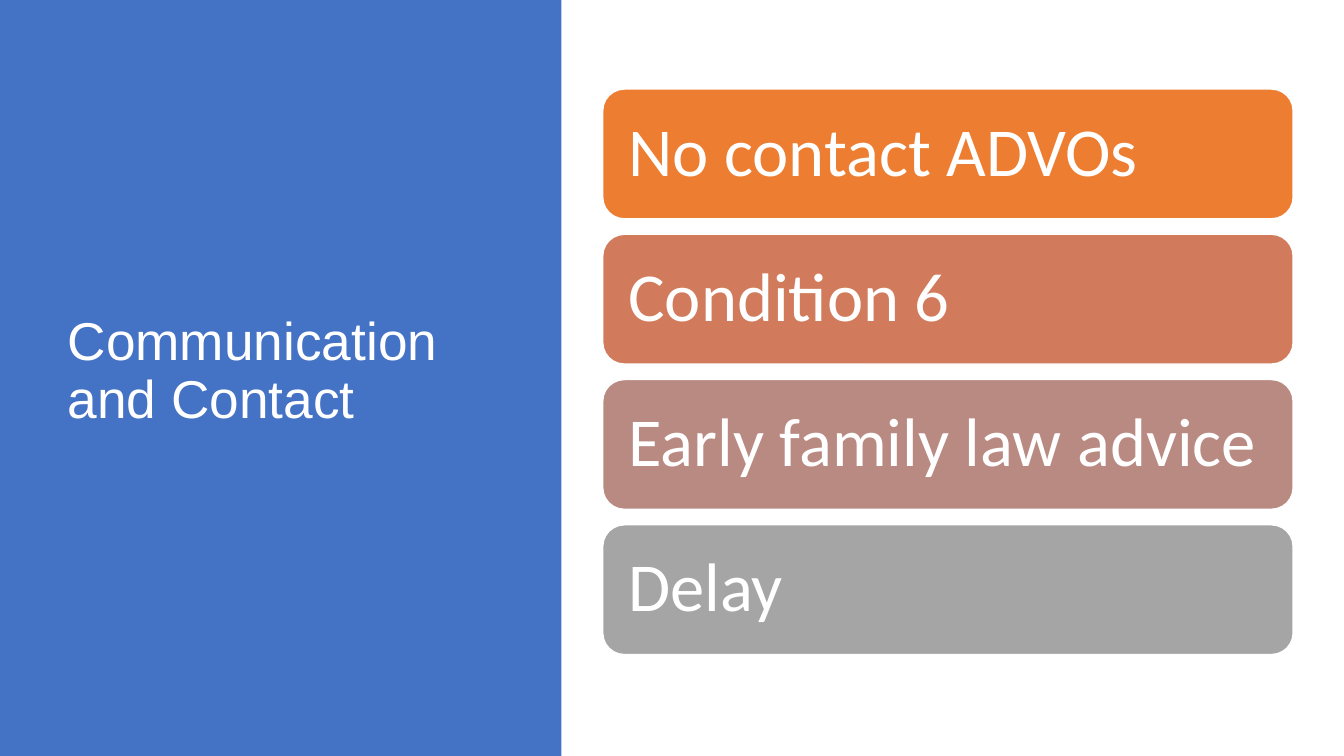
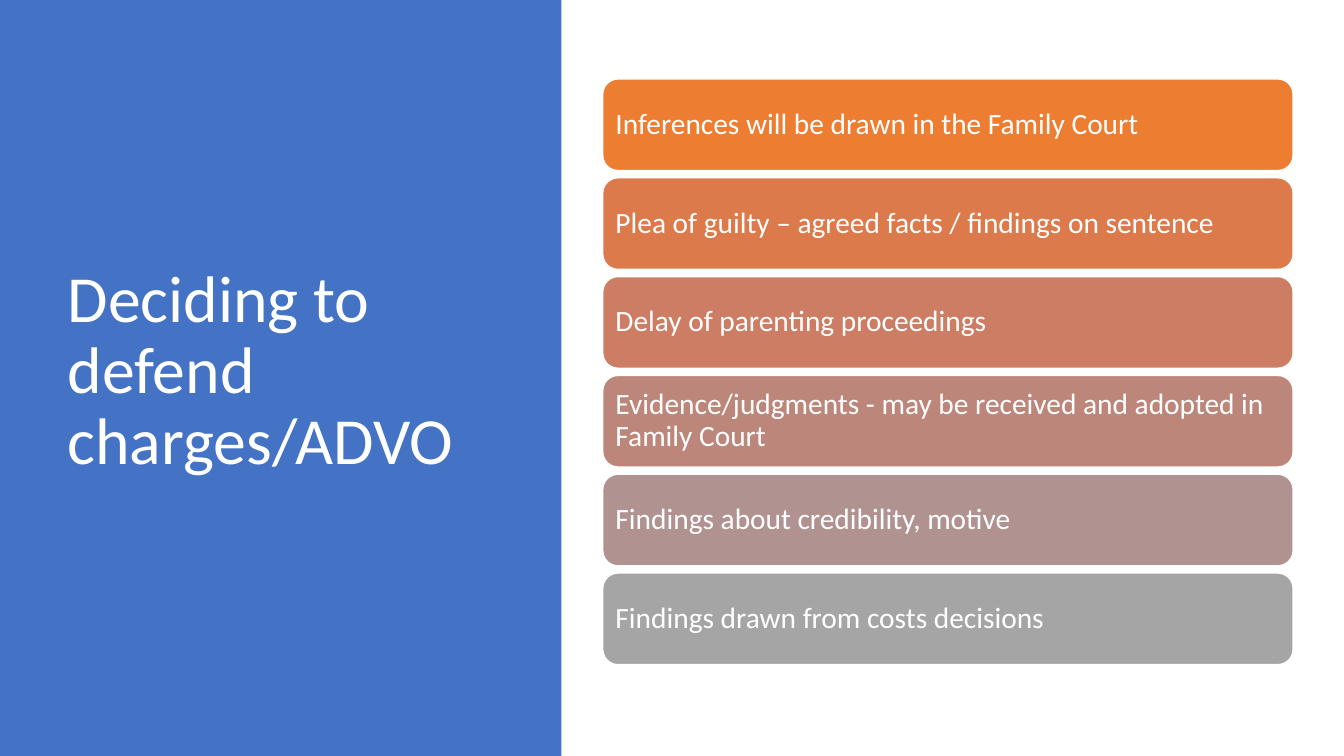
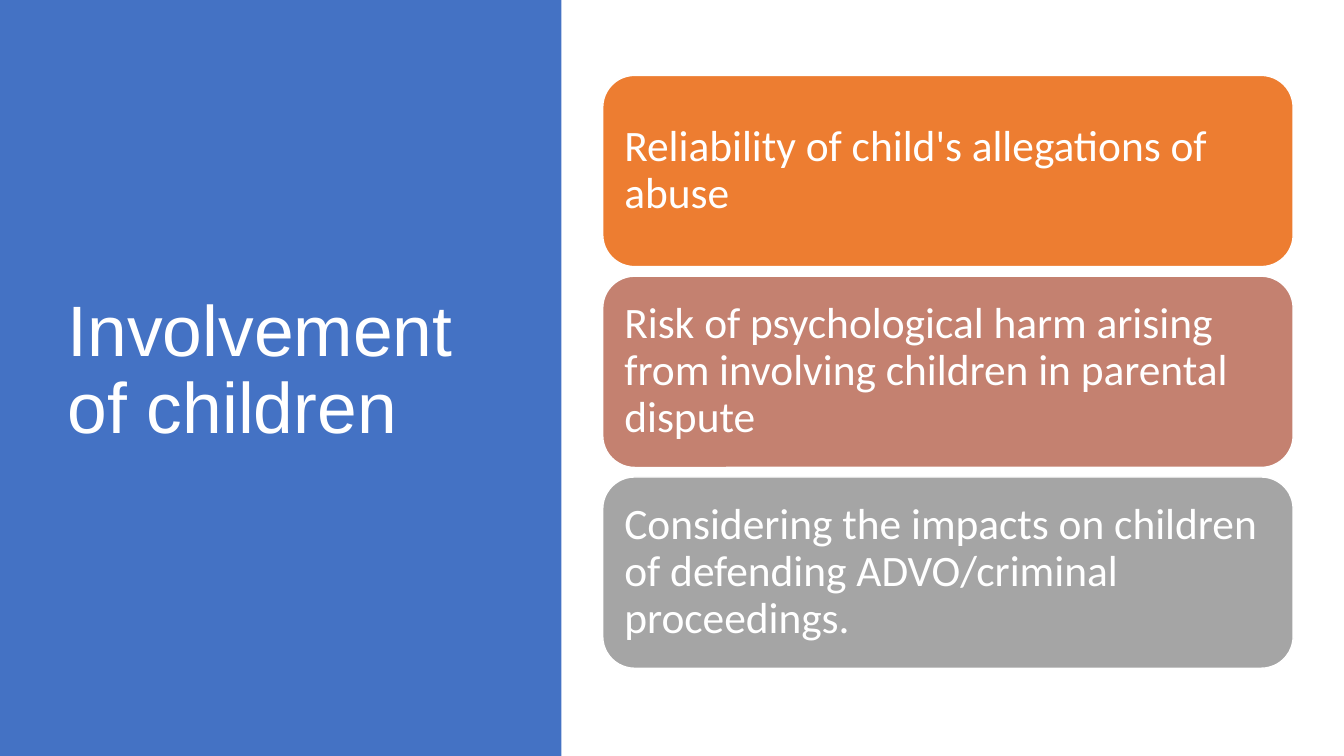
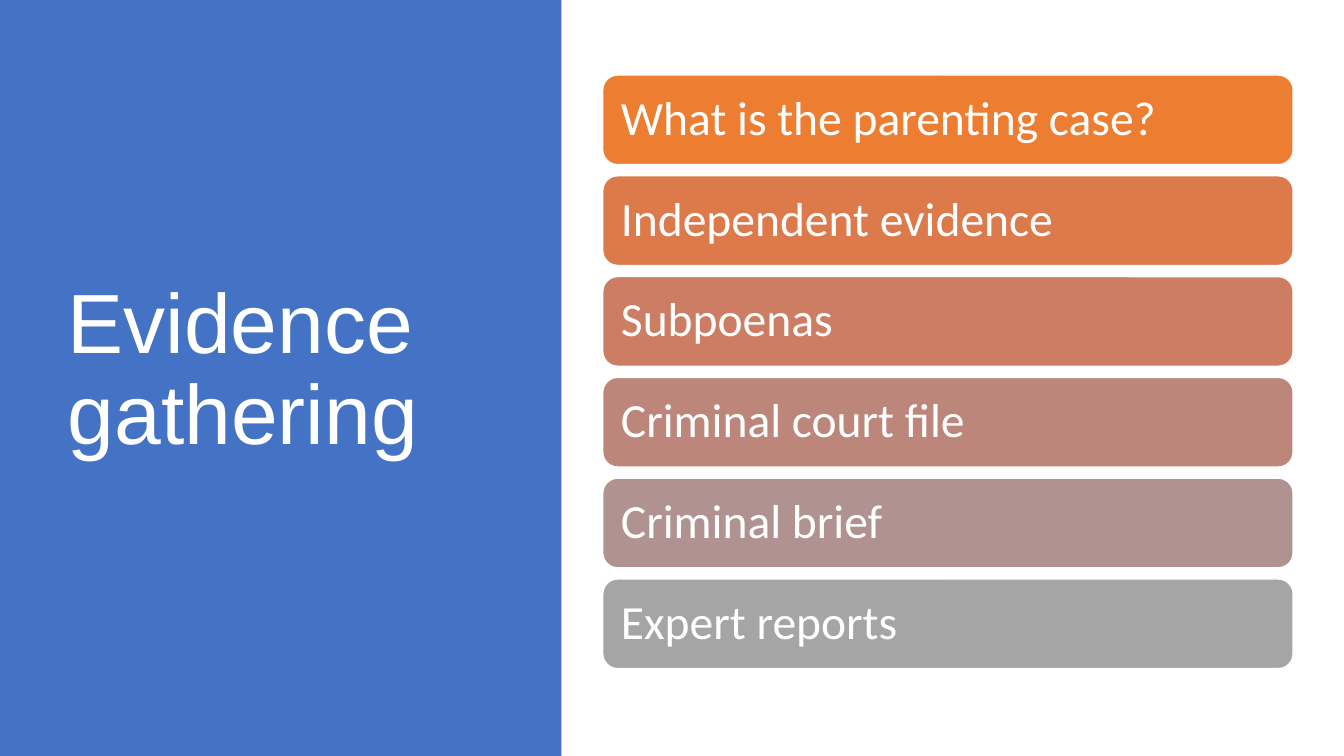
from colorsys import hls_to_rgb, rgb_to_hls
from dataclasses import dataclass

from pptx import Presentation
from pptx.dml.color import RGBColor
from pptx.enum.shapes import MSO_SHAPE
from pptx.enum.text import MSO_ANCHOR, MSO_AUTO_SIZE, PP_ALIGN
from pptx.util import Cm, Pt


@dataclass(frozen=True)
class Theme:
    white: RGBColor = RGBColor(0xFF, 0xFF, 0xFF)
    band: RGBColor = RGBColor(0x44, 0x72, 0xC4)
    first: RGBColor = RGBColor(0xED, 0x7D, 0x31)
    last: RGBColor = RGBColor(0xA5, 0xA5, 0xA5)
    sans: str = "Arial"
    body: str = "Calibri"
    small: int = 21
    medium: int = 31
    large: int = 34
    huge: int = 49
    spacing: float = 0.9


theme = Theme()


def blend(share):
    """Colour at a share of the way from first to last, by hue, lightness and saturation."""
    start, end = (rgb_to_hls(*(part / 255 for part in tone))
                  for tone in (theme.first, theme.last))
    mix = [a + (b - a) * share for a, b in zip(start, end)]
    return RGBColor(*(round(part * 255) for part in hls_to_rgb(*mix)))


def write(shape, text, font, size):
    frame = shape.text_frame
    frame.word_wrap = True
    frame.auto_size = MSO_AUTO_SIZE.NONE
    frame.vertical_anchor = MSO_ANCHOR.MIDDLE
    para = frame.paragraphs[0]
    para.alignment = PP_ALIGN.LEFT
    para.line_spacing = theme.spacing
    run = para.add_run()
    run.text = text
    run.font.name = font
    run.font.size = Pt(size)
    run.font.color.rgb = theme.white


# title, title font, title size, card size, card height, gap, inset (cm), cards
topics = [
    ("Communication and Contact", theme.sans, 38, theme.huge, 3.27, 0.39, 0.49, [
        "No contact ADVOs",
        "Condition 6",
        "Early family law advice",
        "Delay",
    ]),
    ("Deciding to defend charges/ADVO", theme.body, 47, theme.small, 2.31, 0.18, 0.21, [
        "Inferences will be drawn in the Family Court",
        "Plea of guilty – agreed facts / findings on sentence",
        "Delay of parenting proceedings",
        "Evidence/judgments - may be received and adopted in Family Court",
        "Findings about credibility, motive",
        "Findings drawn from costs decisions",
    ]),
    ("Involvement of children", theme.sans, 51, theme.medium, 4.82, 0.24, 0.31, [
        "Reliability of child's allegations of abuse",
        "Risk of psychological harm arising from involving children in parental dispute",
        "Considering the impacts on children of defending ADVO/criminal proceedings.",
    ]),
    ("Evidence gathering", theme.sans, 60, theme.large, 2.26, 0.28, 0.35, [
        "What is the parenting case?",
        "Independent evidence",
        "Subpoenas",
        "Criminal court file",
        "Criminal brief",
        "Expert reports",
    ]),
]

deck = Presentation()
deck.slide_width, deck.slide_height = Cm(33.87), Cm(19.05)
layout = deck.slide_layouts[5]
middle = 9.37

for heading, font, size, card_size, height, gap, inset, cards in topics:
    slide = deck.slides.add_slide(layout)
    title = slide.shapes.title

    band = slide.shapes.add_shape(MSO_SHAPE.RECTANGLE, 0, 0, Cm(14.15), deck.slide_height)
    band.shadow.inherit = False
    band.fill.solid()
    band.fill.fore_color.rgb = theme.band
    band.line.fill.background()
    title.element.addprevious(band.element)

    title.left, title.top = Cm(1.45), Cm(1.73)
    title.width, title.height = Cm(10.57), Cm(15.29)
    write(title, heading, font, size)

    step = height + gap
    top = middle - (len(cards) * step - gap) / 2
    for row, text in enumerate(cards):
        card = slide.shapes.add_shape(MSO_SHAPE.ROUNDED_RECTANGLE, Cm(15.19),
                                      Cm(top + row * step), Cm(17.4), Cm(height))
        card.shadow.inherit = False
        card.fill.solid()
        card.fill.fore_color.rgb = blend(row / (len(cards) - 1))
        card.line.color.rgb = theme.white
        card.line.width = Pt(1)
        frame = card.text_frame
        frame.margin_left = frame.margin_right = Cm(inset)
        frame.margin_top = frame.margin_bottom = Cm(inset)
        write(card, text, theme.body, card_size)

deck.save("out.pptx")
